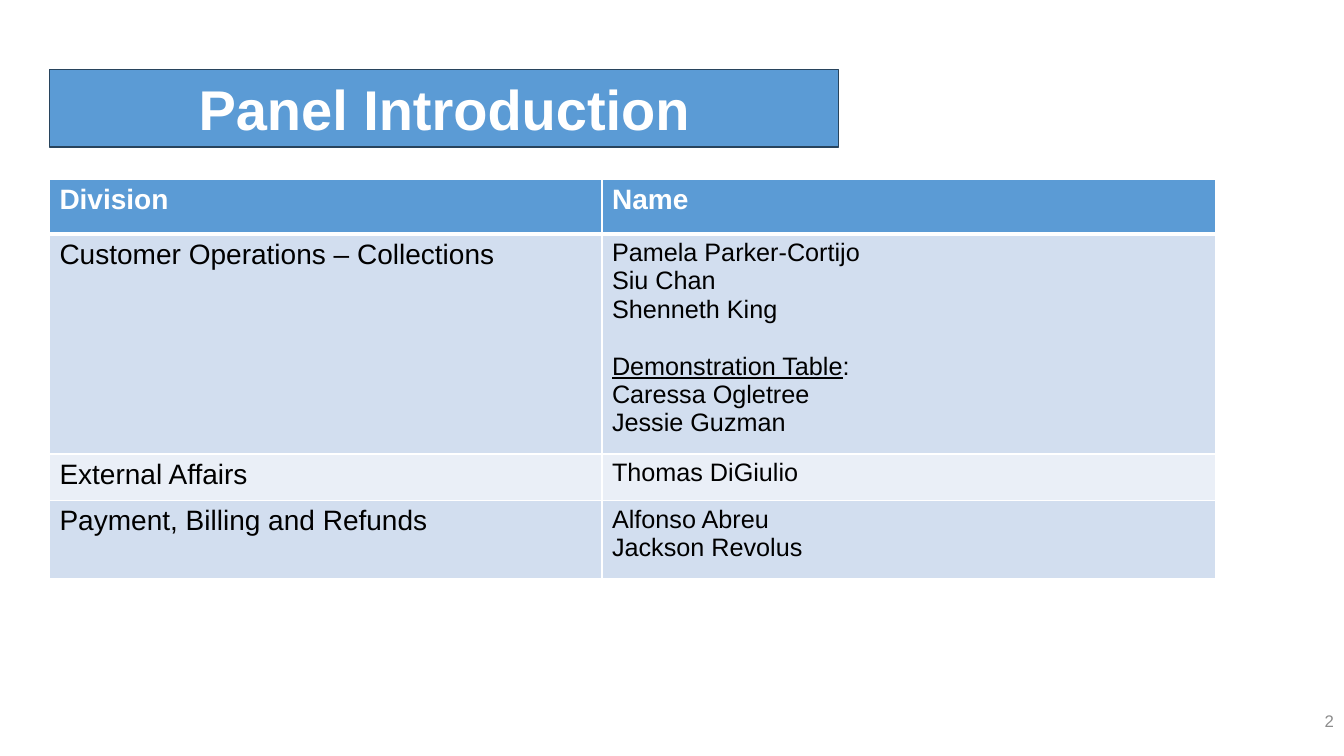
from lxml.etree import SubElement
from pptx import Presentation
from pptx.dml.color import RGBColor
from pptx.enum.shapes import MSO_SHAPE as Shape
from pptx.enum.text import MSO_ANCHOR as Anchor, PP_ALIGN as Align
from pptx.oxml.ns import qn
from pptx.util import Inches, Pt

BLUE, WHITE, BLACK = "5B9BD5", "FFFFFF", "000000"
BANDS = ["D2DEEF", "EAEFF7"]
LEFT = Inches(0.49)
COLUMN_WIDTHS = [5.48, 6.09]
ROW_HEIGHTS = [0.54, 2.06, 0.46, 0.78]
ROWS = [
    (["Division"], ["Name"]),
    (["Customer Operations – Collections"],
     ["Pamela Parker-Cortijo", "Siu Chan", "Shenneth King",
      "Demonstration Table:", "Caressa Ogletree", "Jessie Guzman"]),
    (["External Affairs"], ["Thomas DiGiulio"]),
    (["Payment, Billing and Refunds"], ["Alfonso Abreu", "Jackson Revolus"]),
]


def write(para, text, size, color, bold=False, underline=False, align=Align.LEFT):
    para.alignment = align
    span = para.add_run()
    span.text = text
    span.font.name, span.font.size = "Arial", Pt(size)
    span.font.bold, span.font.underline = bold, underline
    span.font.color.rgb = RGBColor.from_string(color)


def fill_cell(cell, color, bottom_width):
    """Fill a cell and rule it in white; the fill must follow the borders."""
    properties = cell._tc.get_or_add_tcPr()
    for side, width in zip("LRTB", (1, 1, 1, bottom_width)):
        border = SubElement(properties, qn(f"a:ln{side}"), w=str(Pt(width)))
        solid = SubElement(border, qn("a:solidFill"))
        SubElement(solid, qn("a:srgbClr"), val=WHITE)
    cell.fill.solid()
    cell.fill.fore_color.rgb = RGBColor.from_string(color)


deck = Presentation()
deck.slide_width, deck.slide_height = Inches(13.33), Inches(7.5)
slide = deck.slides.add_slide(deck.slide_layouts[6])

# Slide number
number = slide.shapes.add_textbox(
    deck.slide_width - Inches(3), Inches(6.95), Inches(3), Inches(0.4))
number.text_frame.word_wrap = True
number.text_frame.vertical_anchor = Anchor.MIDDLE
write(number.text_frame.paragraphs[0], "2", 12, "8C8C8C", align=Align.RIGHT)

# Panel table
table = slide.shapes.add_table(
    len(ROWS), len(COLUMN_WIDTHS), LEFT, Inches(1.78),
    Inches(sum(COLUMN_WIDTHS)), Inches(sum(ROW_HEIGHTS))).table
table.horz_banding = table.first_row = False
for column, width in zip(table.columns, COLUMN_WIDTHS):
    column.width = Inches(width)

for row_index, (row, height) in enumerate(zip(ROWS, ROW_HEIGHTS)):
    table.rows[row_index].height = Inches(height)
    header = row_index == 0
    for column_index, lines in enumerate(row):
        cell = table.cell(row_index, column_index)
        fill_cell(cell, BLUE if header else BANDS[(row_index - 1) % 2],
                  3 if header else 1)
        size = 20 if header or column_index == 0 else 18
        color = WHITE if header else BLACK
        frame = cell.text_frame
        for line_index, line in enumerate(lines):
            para = frame.add_paragraph() if line_index else frame.paragraphs[0]
            heading, colon, _ = line.partition(":")
            write(para, heading, size, color, bold=header, underline=bool(colon))
            if colon:
                para.space_before = Pt(20.5)
                write(para, colon, size, color)

# Title banner
banner = slide.shapes.add_shape(
    Shape.RECTANGLE, LEFT, Inches(0.69), Inches(7.83), Inches(0.77))
banner.shadow.inherit = False
banner.fill.solid()
banner.fill.fore_color.rgb = RGBColor.from_string(BLUE)
banner.line.color.rgb = RGBColor.from_string("28445D")
banner.line.width = Pt(1)
banner.text_frame.word_wrap = True
banner.text_frame.vertical_anchor = Anchor.TOP
write(banner.text_frame.paragraphs[0], "Panel Introduction", 40, WHITE,
      bold=True, align=Align.CENTER)

deck.save("out.pptx")
